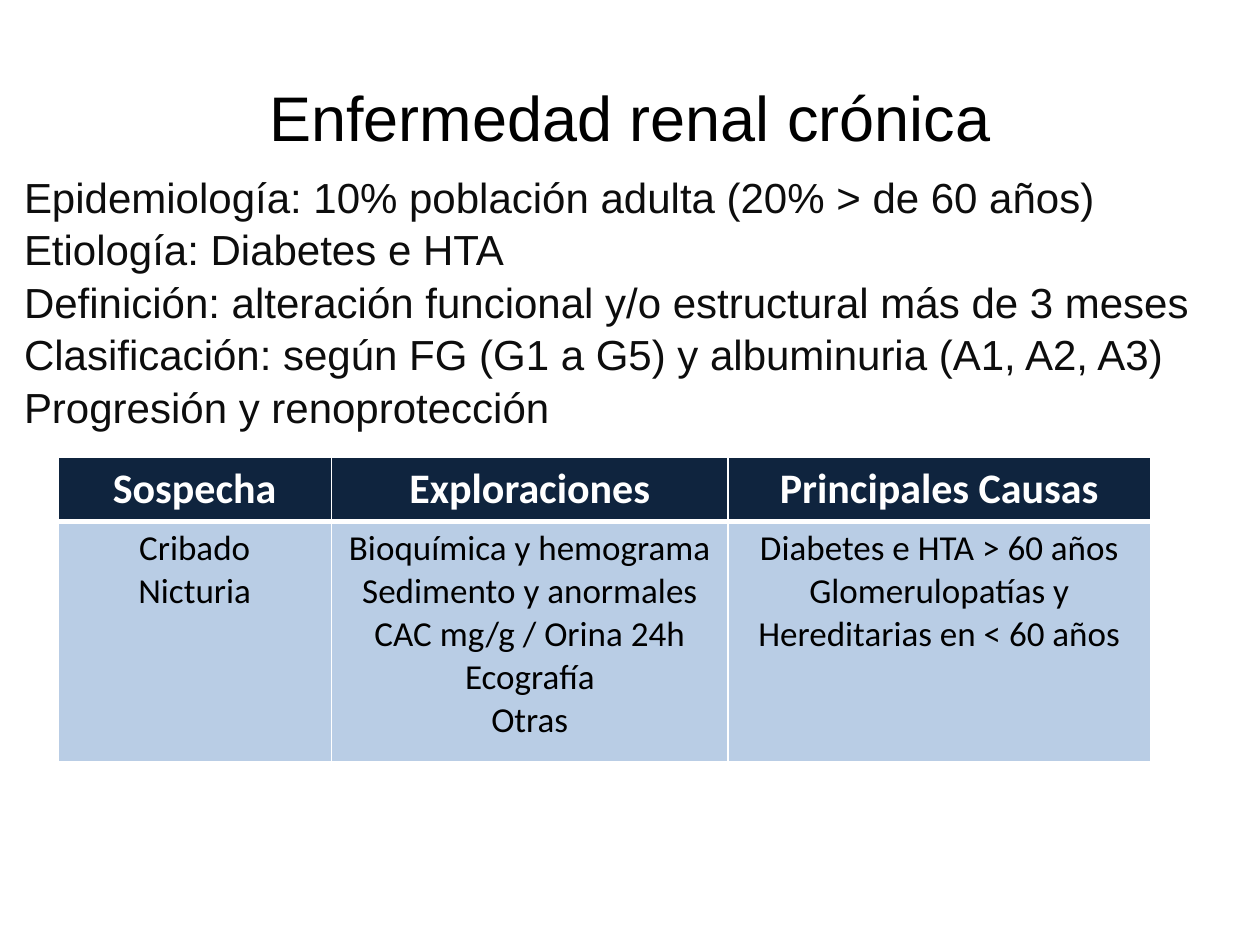
from lxml import etree
from pptx import Presentation
from pptx.dml.color import RGBColor
from pptx.enum.text import MSO_ANCHOR, PP_ALIGN
from pptx.oxml.ns import qn
from pptx.util import Cm, Pt

CENTER, JUSTIFY = PP_ALIGN.CENTER, PP_ALIGN.JUSTIFY
TOP, MIDDLE = MSO_ANCHOR.TOP, MSO_ANCHOR.MIDDLE

COLORS = {"black": "000000", "ink": "0D0D0D", "white": "FFFFFF",
          "navy": "0F243E", "pale": "B9CDE5"}

TITLE = "Enfermedad renal crónica"
FACTS = [
    "Epidemiología: 10% población adulta (20% > de 60 años)",
    "Etiología: Diabetes e HTA",
    "Definición: alteración funcional y/o estructural más de 3 meses",
    "Clasificación: según FG (G1 a G5) y albuminuria (A1, A2, A3)",
    "Progresión y renoprotección",
]
COLUMNS = {
    "Sospecha": ["Cribado", "Nicturia"],
    "Exploraciones": ["Bioquímica y hemograma", "Sedimento y anormales",
                      "CAC mg/g / Orina 24h", "Ecografía", "Otras"],
    "Principales Causas": ["Diabetes e HTA > 60 años",
                           "Glomerulopatías y Hereditarias en < 60 años"],
}
COLUMN_WIDTHS = [5.51, 8, 8.51]
ROW_HEIGHTS = [1.27, 4.85]


def place(shape, left, top, width, height):
    shape.left, shape.top = Cm(left), Cm(top)
    shape.width, shape.height = Cm(width), Cm(height)


def write(frame, lines, font, size, color, align, bold=False):
    frame.text = "\n".join(lines)
    for para in frame.paragraphs:
        para.alignment = align
        for span in para.runs:
            span.font.name, span.font.size, span.font.bold = font, Pt(size), bold
            span.font.color.rgb = RGBColor.from_string(COLORS[color])


def remove_bullet(para):
    props = para._p.get_or_add_pPr()
    props.set("marL", "0")
    props.set("indent", "0")
    etree.SubElement(props, qn("a:buNone"))


def add_borders(cell, points):
    """Draw white cell edges; points maps L, R, T, B to line widths."""
    props = cell._tc.get_or_add_tcPr()
    for index, (side, width) in enumerate(points.items()):
        line = etree.Element(qn(f"a:ln{side}"), w=str(Pt(width)))
        fill = etree.SubElement(line, qn("a:solidFill"))
        etree.SubElement(fill, qn("a:srgbClr"), val=COLORS["white"])
        props.insert(index, line)


def fill_cell(cell, lines, size, color, fill, bold, top_edge, bottom_edge):
    write(cell.text_frame, lines, "Calibri", size, color, CENTER, bold)
    cell.vertical_anchor = TOP
    cell.fill.solid()
    cell.fill.fore_color.rgb = RGBColor.from_string(COLORS[fill])
    add_borders(cell, {"L": 1, "R": 1, "T": top_edge, "B": bottom_edge})


deck = Presentation()
deck.slide_width, deck.slide_height = Cm(25.4), Cm(19.05)
page = deck.slides.add_slide(deck.slide_layouts[1])
page.background.fill.solid()
page.background.fill.fore_color.rgb = RGBColor.from_string(COLORS["white"])

title, body = page.placeholders
place(title, 1.27, 0.76, 22.86, 3.18)
write(title.text_frame, [TITLE], "Arial", 36, "black", CENTER)
title.text_frame.vertical_anchor = MIDDLE

place(body, 0.23, 3.33, 25.1, 5.13)
write(body.text_frame, FACTS, "Arial", 24, "ink", JUSTIFY)
for para in body.text_frame.paragraphs:
    para.space_before = Pt(1.2)
    remove_bullet(para)

table = page.shapes.add_table(
    len(ROW_HEIGHTS), len(COLUMNS), Cm(1.17), Cm(9.22),
    Cm(sum(COLUMN_WIDTHS)), Cm(sum(ROW_HEIGHTS))).table
for row, height in zip(table.rows, ROW_HEIGHTS):
    row.height = Cm(height)
for index, (heading, items) in enumerate(COLUMNS.items()):
    table.columns[index].width = Cm(COLUMN_WIDTHS[index])
    fill_cell(table.cell(0, index), [heading], 24, "white", "navy", True, 1, 3)
    fill_cell(table.cell(1, index), items, 20, "black", "pale", False, 3, 1)

deck.save("out.pptx")
